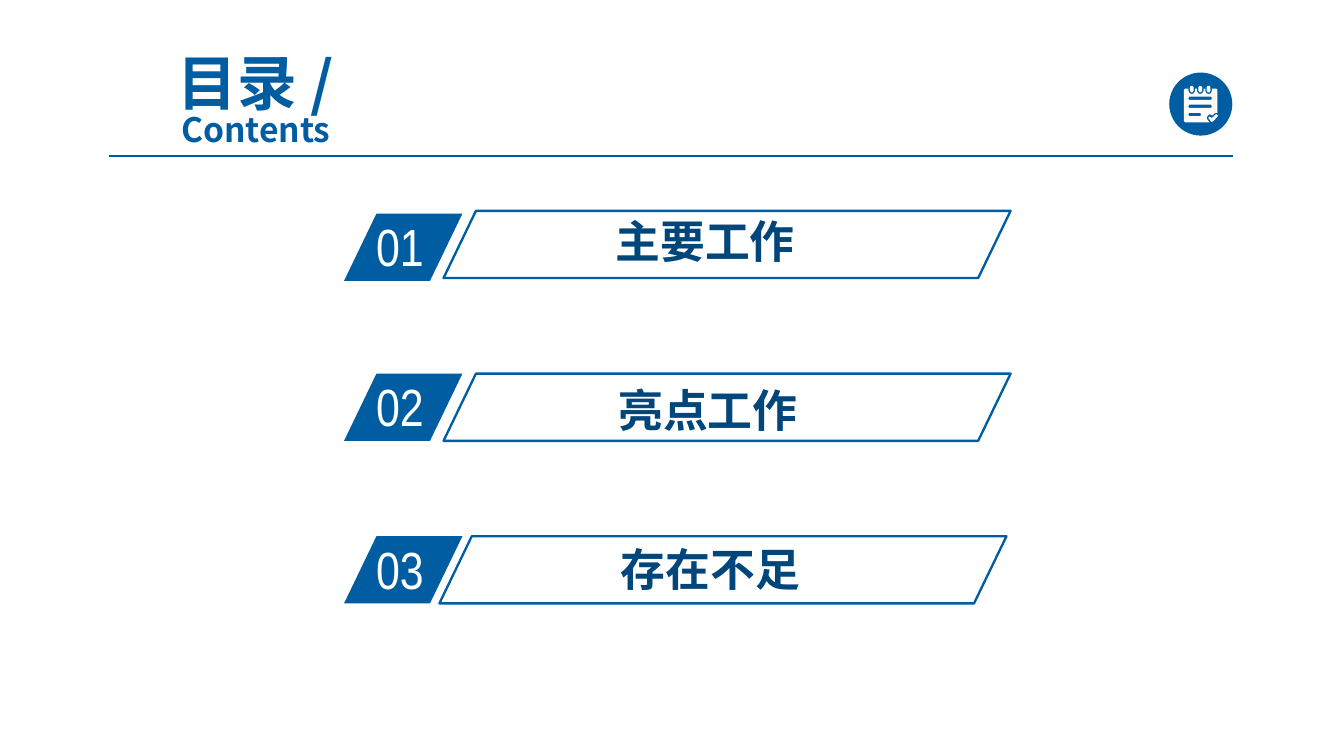
"""Build a contents slide with three numbered entries."""
from lxml import etree
from pptx import Presentation
from pptx.dml.color import RGBColor
from pptx.enum.shapes import MSO_CONNECTOR, MSO_SHAPE
from pptx.enum.text import MSO_ANCHOR, PP_ALIGN
from pptx.oxml.ns import qn
from pptx.util import Pt

SLANT = MSO_SHAPE.PARALLELOGRAM
OVAL = MSO_SHAPE.OVAL
LINE = MSO_CONNECTOR.STRAIGHT
MIDDLE = MSO_ANCHOR.MIDDLE
CENTER = PP_ALIGN.CENTER

SANS, NARROW = "Noto Sans CJK SC", "Arial Narrow"
BLUE, NAVY, RULE, WHITE = "005DA2", "00467A", "005B9E", "FFFFFF"

TITLE = [("目录 /", 32), ("Contents", 18)]
ROWS = [
    {"no": "01", "name": "主要工作", "top": 114.5, "box": (237.6, 113), "text": (324.7, 111.6)},
    {"no": "02", "name": "亮点工作", "top": 200.2, "box": (237.6, 200.2), "text": (326.2, 202.3)},
    {"no": "03", "name": "存在不足", "top": 287.3, "box": (235.4, 287.3), "text": (327.6, 287.3)},
]
RINGS = [638.5, 643, 647.5]
BARS = [(636.6, 649.3, 52.7), (636.6, 649.3, 57), (636.6, 643.5, 61.4)]
TICK = [(647.3, 63.2), (648, 62.5), (649.3, 63.2), (651.5, 61.2),
        (652.6, 62), (650, 65), (649, 65.4)]


def paint(color):
    return RGBColor.from_string(color)


def style(para, face, color, size=None, bold=False):
    font = para.font
    font.name, font.bold = face, bold
    font.color.rgb = paint(color)
    if size:
        font.size = Pt(size)
    props = para._p.pPr.find(qn("a:defRPr"))
    etree.SubElement(props, qn("a:ea")).set("typeface", face)


def finish(shape, fill=None, line=None):
    shape.shadow.inherit = False
    if fill:
        shape.fill.solid()
        shape.fill.fore_color.rgb = paint(fill)
    else:
        shape.fill.background()
    if line:
        shape.line.color.rgb = paint(line)
        shape.line.width = Pt(1.25)
    else:
        shape.line.fill.background()


def add_form(slide, kind, left, top, width, height, **look):
    shape = slide.shapes.add_shape(kind, Pt(left), Pt(top), Pt(width), Pt(height))
    if kind == SLANT:
        shape.adjustments[0] = 0.482
    finish(shape, **look)


def add_text(slide, left, top, width, height):
    box = slide.shapes.add_textbox(Pt(left), Pt(top), Pt(width), Pt(height))
    frame = box.text_frame
    frame.word_wrap = True
    return frame


def add_title(slide):
    frame = add_text(slide, 48.2, 33.8, 177.8, 38.9)
    frame.vertical_anchor = MIDDLE
    frame.margin_top = Pt(9)
    para = frame.paragraphs[0]
    para.alignment, para.line_spacing = CENTER, 0.8
    style(para, SANS, BLUE, bold=True)
    for i, (words, size) in enumerate(TITLE):
        if i:
            para.add_line_break()
        run = para.add_run()
        run.text = words
        run.font.size = Pt(size)


def add_row(slide, row):
    add_form(slide, SLANT, 184.3, row["top"], 63.4, 36, fill=BLUE)
    frame = add_text(slide, 194.4, row["top"] - 3, 60.5, 35.3)
    frame.text = row["no"]
    style(frame.paragraphs[0], NARROW, WHITE, 28)
    frame = add_text(slide, *row["text"], 222.5, 34.6)
    frame.margin_left = frame.margin_right = Pt(5)
    frame.margin_top = frame.margin_bottom = Pt(2.9)
    frame.text = row["name"]
    style(frame.paragraphs[0], SANS, NAVY, 24, True)
    add_form(slide, SLANT, *row["box"], 303.8, 36, line=BLUE)


def add_icon(slide):
    add_form(slide, OVAL, 626.4, 38.9, 33.8, 33.8, fill=BLUE)
    page = [(634.3, 65), (634.3, 48), (635, 47.5)]
    loops = []
    for x in RINGS:
        page += [(x + dx, y) for dx, y in
                 [(-1.8, 47.5), (-1.8, 48.8), (-1, 50.1), (0, 50.4),
                  (1, 50.1), (1.8, 48.8), (1.8, 47.5)]]
        loops.append([(x + dx, y) for dx, y in
                      [(-1, 46.8), (-0.5, 46.1), (0.5, 46.1), (1, 46.8),
                       (1, 48.5), (0.5, 49.5), (-0.5, 49.5), (-1, 48.5)]])
    page += [(651.5, 47.5), (652.2, 48), (652.2, 60.5), (651, 60.5),
             (649.5, 61.9), (648, 61.2), (646.6, 62.6), (646.6, 63.8),
             (648, 65.6), (635, 65.6)]
    for left, right, y in BARS:
        loops.append([(left, y), (left + 0.5, y - 0.9), (right - 0.5, y - 0.9), (right, y),
                      (right - 0.5, y + 0.9), (left + 0.5, y + 0.9)])
    pen = None
    for loop in [page, *loops, TICK]:
        first, *rest = [(Pt(x), Pt(y)) for x, y in loop]
        if pen:
            pen.move_to(*first)
        else:
            pen = slide.shapes.build_freeform(*first)
        pen.add_line_segments(rest, close=True)
    finish(pen.convert_to_shape(), fill=WHITE)


def main():
    deck = Presentation()
    deck.slide_width, deck.slide_height = Pt(720), Pt(405)
    slide = deck.slides.add_slide(deck.slide_layouts[6])
    add_title(slide)
    rule = slide.shapes.add_connector(LINE, Pt(58.5), Pt(83.5), Pt(660.5), Pt(83.5))
    rule.line.color.rgb = paint(RULE)
    rule.line.width = Pt(0.75)
    etree.SubElement(rule._element.spPr, qn("a:effectLst"))
    for row in ROWS:
        add_row(slide, row)
    add_icon(slide)
    deck.save("out.pptx")


if __name__ == "__main__":
    main()
